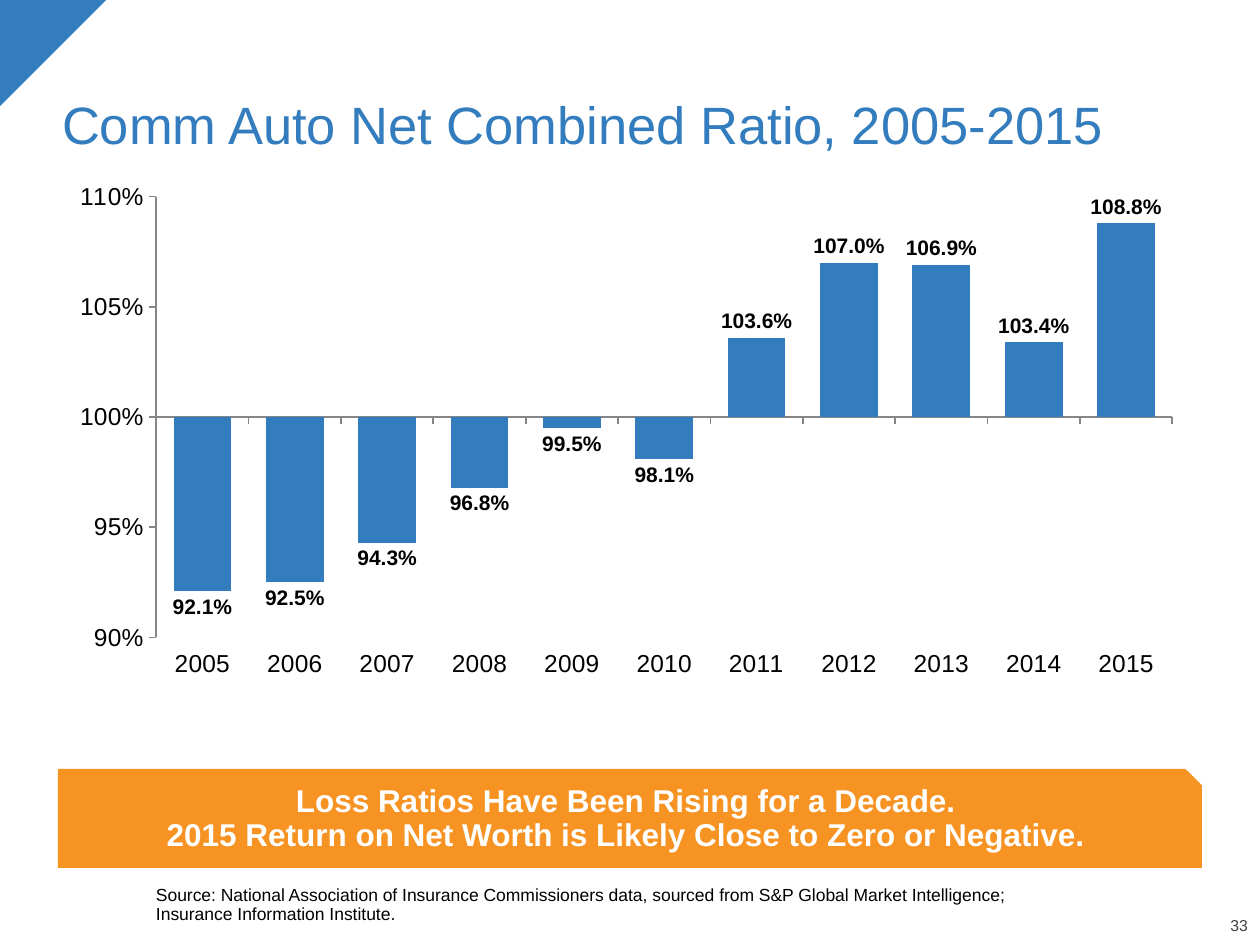
from lxml import etree
from pptx import Presentation
from pptx import util as u
from pptx.chart import data
from pptx.dml.color import RGBColor
from pptx.enum import chart as ch, shapes, text

SCALE = 914400 / 126  # EMU in one px
FONT = "Arial"
BLUE, ORANGE, GREY = "337DBE", "F69322", "868686"
BLACK, WHITE, DARK = "000000", "FFFFFF", "404040"
LEFT, CENTER, RIGHT = text.PP_ALIGN.LEFT, text.PP_ALIGN.CENTER, text.PP_ALIGN.RIGHT
MIDDLE, BOTTOM = text.MSO_ANCHOR.MIDDLE, text.MSO_ANCHOR.BOTTOM

YEARS = [str(year) for year in range(2005, 2016)]
RATIOS = [0.921, 0.925, 0.943, 0.968, 0.995, 0.981,
          1.036, 1.07, 1.069, 1.034, 1.088]


def px(n):
    return u.Emu(round(n * SCALE))


def rgb(code):
    return RGBColor.from_string(code)


def style(font, size, color, bold=False):
    font.name, font.size, font.bold = FONT, u.Pt(size), bold
    font.color.rgb = rgb(color)


def write(shape, words, size, color, align=LEFT, anchor=BOTTOM,
          bold=False, inset=(0, 0, 0, 0)):
    frame = shape.text_frame
    frame.text = words
    frame.word_wrap = True
    frame.auto_size = text.MSO_AUTO_SIZE.NONE
    frame.vertical_anchor = anchor
    (frame.margin_left, frame.margin_top,
     frame.margin_right, frame.margin_bottom) = map(px, inset)
    for para in frame.paragraphs:
        para.alignment, para.line_spacing = align, 0.9
        for run in para.runs:
            style(run.font, size, color, bold)


def add_block(slide, kind, box, color):
    shape = slide.shapes.add_shape(kind, *map(px, box))
    shape.shadow.inherit = False
    shape.fill.solid()
    shape.fill.fore_color.rgb = rgb(color)
    shape.line.fill.background()
    return shape


def add_corner(slide, box):
    shape = add_block(slide, shapes.MSO_SHAPE.RIGHT_TRIANGLE, box, BLUE)
    shape.rotation = 90


def add_title(slide, box, words):
    title = slide.shapes.title
    title.left, title.top, title.width, title.height = map(px, box)
    write(title, words, 30, BLUE, inset=(13, 6, 13, 6))


def add_note(slide, box, words, size, color, align=LEFT):
    note = slide.shapes.add_textbox(*map(px, box))
    write(note, words, size, color, align)


def add_banner(slide, box, words):
    shape = add_block(slide, shapes.MSO_SHAPE.SNIP_1_RECTANGLE, box, ORANGE)
    write(shape, words, 18, WHITE, CENTER, MIDDLE, True, (13, 6, 13, 13))


def set_plot(chart, **spots):
    """Fix the inner plot area, in parts of the chart's size."""
    area = chart.plots[0]._element.getparent()
    ns = area.nsmap["c"]
    for old in area.findall(f"{{{ns}}}layout"):
        area.remove(old)
    layout = etree.Element(f"{{{ns}}}layout")
    area.insert(0, layout)
    manual = etree.SubElement(layout, f"{{{ns}}}manualLayout")
    modes = {"layoutTarget": "inner", "xMode": "edge", "yMode": "edge"}
    for name, val in {**modes, **spots}.items():
        etree.SubElement(manual, f"{{{ns}}}{name}").set("val", str(val))


def add_bars(slide, box):
    source = data.CategoryChartData(number_format="0.0%")
    source.categories = YEARS
    source.add_series("Series 1", RATIOS)
    chart = slide.shapes.add_chart(
        ch.XL_CHART_TYPE.COLUMN_CLUSTERED, *map(px, box), source).chart
    chart.has_legend = chart.has_title = False
    style(chart.font, 14, BLACK)
    set_plot(chart, x=0.086, y=0.036, w=0.889, h=0.771)

    # Axes, with the bars growing from 100%
    years, scale = chart.category_axis, chart.value_axis
    for axis in (years, scale):
        axis.has_major_gridlines = False
        axis.major_tick_mark = ch.XL_TICK_MARK.OUTSIDE
        axis.format.line.color.rgb = rgb(GREY)
        axis.format.line.width = u.Pt(1)
    years.tick_label_position = ch.XL_TICK_LABEL_POSITION.LOW
    scale.minimum_scale, scale.maximum_scale = 0.9, 1.1
    scale.major_unit, scale.crosses_at = 0.05, 1
    scale.tick_labels.number_format = "0%"
    scale.tick_labels.number_format_is_linked = False

    # Bars and their labels
    plot = chart.plots[0]
    plot.gap_width, plot.vary_by_categories = 60, False
    bars = plot.series[0]
    bars.invert_if_negative = False
    bars.format.fill.solid()
    bars.format.fill.fore_color.rgb = rgb(BLUE)
    labels = bars.data_labels
    labels.show_value = True
    labels.position = ch.XL_LABEL_POSITION.OUTSIDE_END
    labels.number_format, labels.number_format_is_linked = "0.0%", False
    style(labels.font, 12, BLACK, True)


def main():
    deck = Presentation()
    deck.slide_width, deck.slide_height = px(1260), px(945)
    slide = deck.slides.add_slide(deck.slide_layouts[5])
    add_corner(slide, (0, 0, 106, 106))
    add_title(slide, (49, 31, 1166, 131),
              "Comm Auto Net Combined Ratio, 2005-2015")
    add_bars(slide, (58, 176, 1143, 572))
    add_banner(slide, (58, 769, 1144, 99),
               "Loss Ratios Have Been Rising for a Decade.\v"
               "2015 Return on Net Worth is Likely Close to Zero or Negative.")
    add_note(slide, (156, 867, 1058, 57),
             "Source: National Association of Insurance Commissioners data, "
             "sourced from S&P Global Market Intelligence;\v"
             "Insurance Information Institute.", 10, BLACK)
    add_note(slide, (1188, 918, 60, 17), "33", 9, DARK, RIGHT)
    deck.save("out.pptx")


if __name__ == "__main__":
    main()
